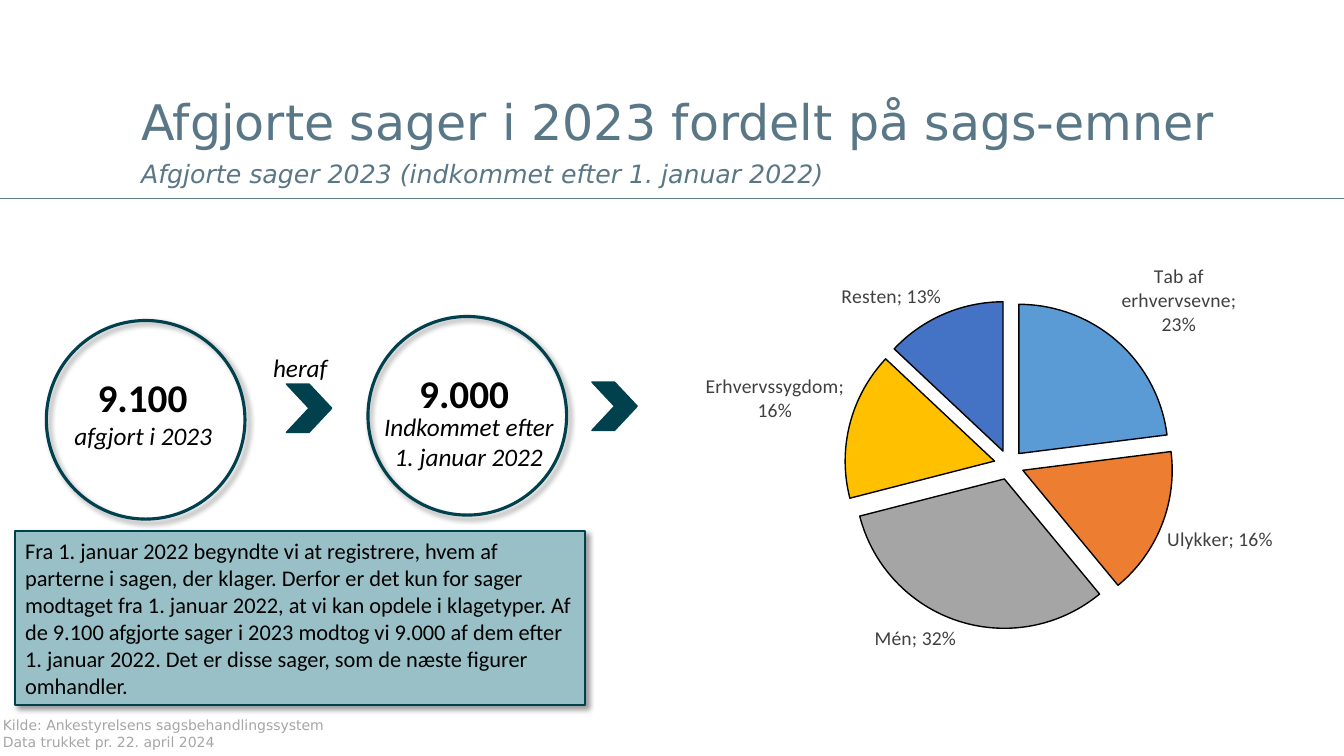
from lxml import etree
from pptx import Presentation
from pptx.chart.data import CategoryChartData
from pptx.dml.color import RGBColor
from pptx.enum.chart import XL_CHART_TYPE, XL_LABEL_POSITION
from pptx.enum.shapes import MSO_CONNECTOR, MSO_SHAPE
from pptx.enum.text import MSO_ANCHOR, PP_ALIGN
from pptx.oxml import parse_xml
from pptx.oxml.ns import nsdecls, qn
from pptx.util import Inches, Pt

PIE = XL_CHART_TYPE.PIE
OUTSIDE = XL_LABEL_POSITION.OUTSIDE_END
STRAIGHT = MSO_CONNECTOR.STRAIGHT
OVAL, CHEVRON, RECTANGLE = MSO_SHAPE.OVAL, MSO_SHAPE.CHEVRON, MSO_SHAPE.RECTANGLE
TOP, MIDDLE = MSO_ANCHOR.TOP, MSO_ANCHOR.MIDDLE
LEFT, CENTER = PP_ALIGN.LEFT, PP_ALIGN.CENTER

HEADING, BODY = "DejaVu Sans", "Calibri"
SLATE, TEAL, PALE_TEAL = "597786", "00414D", "99C0C6"
BLACK, GREY, LABEL_GREY = "000000", "A6A6A6", "404040"
CASE_SHARES = [
    ("Tab af erhvervsevne", 0.23, "5B9BD5"),
    ("Ulykker", 0.16, "ED7D31"),
    ("Mén", 0.32, "A5A5A5"),
    ("Erhvervssygdom", 0.16, "FFC000"),
    ("Resten", 0.13, "4472C4"),
]
NOTE = (
    "Fra 1. januar 2022 begyndte vi at registrere, hvem af parterne i sagen, "
    "der klager. Derfor er det kun for sager modtaget fra 1. januar 2022, at vi "
    "kan opdele i klagetyper. Af de 9.100 afgjorte sager i 2023 modtog vi 9.000 "
    "af dem efter 1. januar 2022. Det er disse sager, som de næste figurer omhandler."
)


def color(value):
    """Turn a hex string into a colour."""
    return RGBColor.from_string(value)


def place(shape, left, top, width, height):
    """Move and size a shape, in inches."""
    shape.left, shape.top = Inches(left), Inches(top)
    shape.width, shape.height = Inches(width), Inches(height)


def style_font(font, size, name=BODY, hue=BLACK, bold=False, italic=False):
    """Set the look of a font."""
    font.size, font.name = Pt(size), name
    font.bold, font.italic = bold, italic
    font.color.rgb = color(hue)


def write(shape, lines, size, align=LEFT, anchor=TOP, wrap=True, **look):
    """Fill a shape with paragraphs of one look."""
    frame = shape.text_frame
    frame.text = "\n".join(lines)
    frame.word_wrap, frame.vertical_anchor = wrap, anchor
    for para in frame.paragraphs:
        para.alignment = align
        para.space_before = Pt(0)
        style_font(para.font, size, **look)


def add_text(page, area, lines, size, **look):
    """Add a text box."""
    box = page.shapes.add_textbox(*map(Inches, area))
    write(box, lines, size, **look)


def add_shadow(shape):
    """Give a shape a soft shadow down to the right."""
    shape._element.spPr.append(parse_xml(
        f'<a:effectLst {nsdecls("a")}><a:outerShdw blurRad="50800" dist="38100" '
        f'dir="2700000" algn="tl" rotWithShape="0"><a:srgbClr val="{BLACK}">'
        '<a:alpha val="40000"/></a:srgbClr></a:outerShdw></a:effectLst>'))


def add_outlined(page, kind, area, line_width, fill=None, shadow=False):
    """Add a preset shape with a teal outline."""
    shape = page.shapes.add_shape(kind, *map(Inches, area))
    if fill:
        shape.fill.solid()
        shape.fill.fore_color.rgb = color(fill)
    else:
        shape.fill.background()
    shape.line.color.rgb = color(TEAL)
    shape.line.width = Pt(line_width)
    if shadow:
        add_shadow(shape)
    else:
        shape.shadow.inherit = False
    return shape


def add_count(page, left, top, count):
    """Add a ring with its number of cases."""
    add_outlined(page, OVAL, (left, top, 1.97, 1.97), 2.25, shadow=True)
    add_text(page, (left + 0.41, top + 0.47, 1.2, 0.57), [count], 28,
             wrap=False, bold=True)


def add_rule(page, top):
    """Draw the line below the headings."""
    rule = page.shapes.add_connector(
        STRAIGHT, 0, Inches(top), Inches(13.33), Inches(top))
    rule.line.color.rgb = color("5F7B8A")
    rule.line.width = Pt(1.25)
    etree.SubElement(rule._element.spPr, qn("a:effectLst"))


def add_share_pie(page):
    """Add the exploded pie of case subjects."""
    data = CategoryChartData(number_format="0%")
    data.categories = [name for name, _, _ in CASE_SHARES]
    data.add_series("Series 1", [share for _, share, _ in CASE_SHARES])
    area = map(Inches, (6.15, 2.31, 7.18, 4.32))
    chart = page.shapes.add_chart(PIE, *area, data).chart
    chart.has_legend = chart.has_title = False
    style_font(chart.font, 14)
    plot = chart.plots[0]
    plot.vary_by_categories = True
    series = plot.series[0]
    for index, (_, _, fill) in enumerate(CASE_SHARES):
        look = series.points[index].format
        look.fill.solid()
        look.fill.fore_color.rgb = color(fill)
        look.line.color.rgb = color(BLACK)
        look.line.width = Pt(1)
    series._element.find(qn("c:tx")).addnext(
        parse_xml(f'<c:explosion {nsdecls("c")} val="10"/>'))

    labels = series.data_labels
    labels.show_value = labels.show_category_name = True
    labels.show_percentage = False
    labels.number_format, labels.number_format_is_linked = "0%", False
    labels.position = OUTSIDE
    style_font(labels.font, 14, hue=LABEL_GREY)
    separator = parse_xml(f'<c:separator {nsdecls("c")}>; </c:separator>')
    before = labels._element.find(qn("c:showBubbleSize"))
    if before is None:
        before = labels._element.find(qn("c:showPercent"))
    before.addnext(separator)


def main():
    """Build the slide and save it."""
    deck = Presentation()
    deck.slide_width, deck.slide_height = Inches(13.33), Inches(7.5)
    page = deck.slides.add_slide(deck.slide_layouts[0])
    title, subtitle = page.placeholders
    place(title, 1.3, 0.86, 11.61, 0.68)
    write(title, ["Afgjorte sager i 2023 fordelt på sags-emner"], 35,
          name=HEADING, hue=SLATE)
    place(subtitle, 1.3, 1.52, 11.61, 0.42)
    write(subtitle, ["Afgjorte sager 2023 (indkommet efter 1. januar 2022)"], 18,
          name=HEADING, hue=SLATE, italic=True)
    add_rule(page, 1.97)

    add_share_pie(page)
    add_count(page, 0.46, 3.18, "9.100")
    add_text(page, (0.64, 4.12, 1.64, 0.4), ["afgjort i 2023"], 18,
             wrap=False, italic=True)
    add_count(page, 3.65, 3.14, "9.000")
    add_text(page, (3.68, 4.03, 1.94, 0.71), ["Indkommet efter 1. januar 2022"], 18,
             align=CENTER, italic=True)
    add_text(page, (2.61, 3.45, 0.75, 0.4), ["heraf"], 18, wrap=False, italic=True)
    for left, top in ((2.84, 3.81), (5.87, 3.79)):
        add_outlined(page, CHEVRON, (left, top, 0.45, 0.48), 1, TEAL)

    note = add_outlined(page, RECTANGLE, (0.15, 5.27, 5.65, 1.72), 1.5,
                        PALE_TEAL, shadow=True)
    write(note, [NOTE], 16, anchor=MIDDLE)
    add_text(page, (-0.07, 7.06, 3.45, 0.44),
             ["Kilde: Ankestyrelsens sagsbehandlingssystem",
              "Data trukket pr. 22. april 2024"],
             10, wrap=False, name=HEADING, hue=GREY)
    deck.save("out.pptx")


if __name__ == "__main__":
    main()
